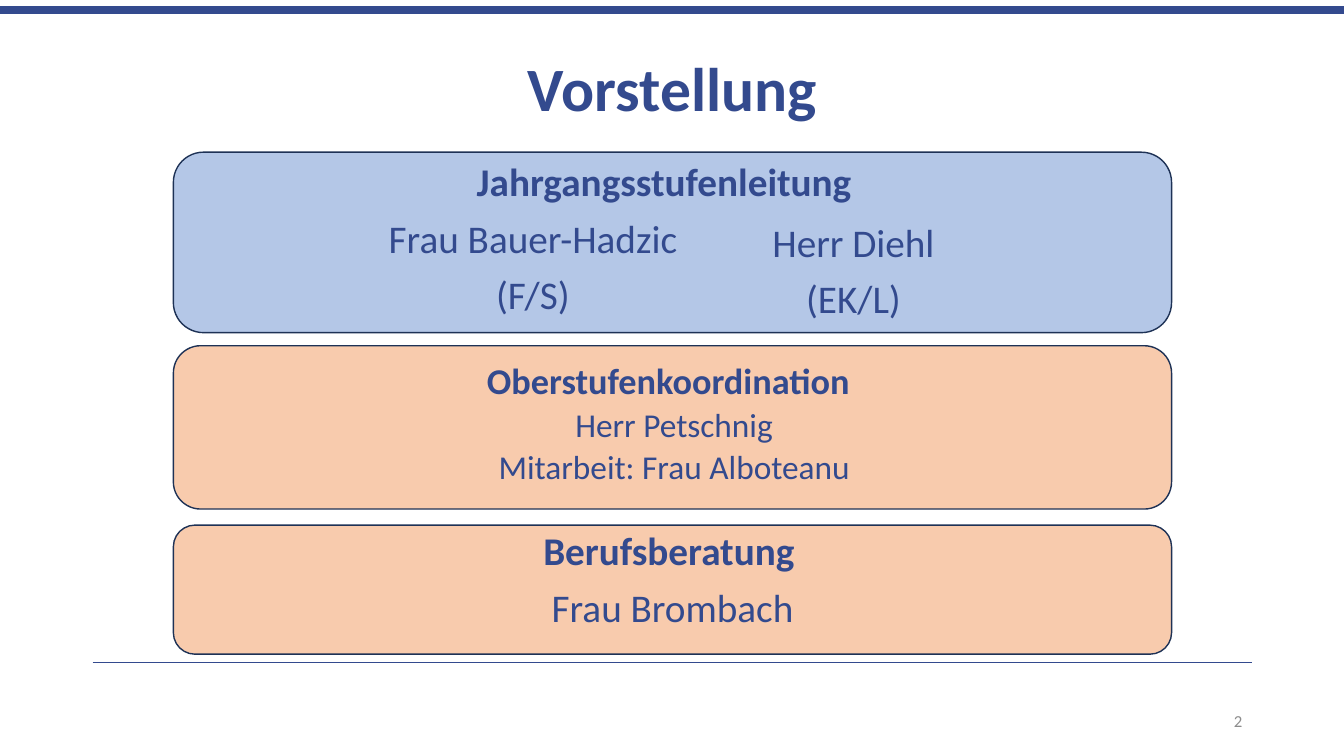
"""Build the slide that introduces the school's contact persons."""
from lxml import etree
from pptx import Presentation
from pptx.dml.color import RGBColor
from pptx.enum.shapes import MSO_CONNECTOR, MSO_SHAPE
from pptx.enum.text import MSO_ANCHOR, PP_ALIGN
from pptx.oxml.ns import qn
from pptx.util import Inches, Pt

LEFT, CENTER, RIGHT = PP_ALIGN.LEFT, PP_ALIGN.CENTER, PP_ALIGN.RIGHT
TOP, MIDDLE = MSO_ANCHOR.TOP, MSO_ANCHOR.MIDDLE
STRAIGHT = MSO_CONNECTOR.STRAIGHT
ROUNDED = MSO_SHAPE.ROUNDED_RECTANGLE

NAVY = RGBColor(0x33, 0x4A, 0x8E)
OUTLINE = RGBColor(0x1E, 0x32, 0x56)
BLUE = RGBColor(0xB4, 0xC7, 0xE7)
PEACH = RGBColor(0xF8, 0xCB, 0xAD)
GRAY = RGBColor(0x8C, 0x8C, 0x8C)

FONT = "Calibri"
SLIDE_WIDTH, SLIDE_HEIGHT = 13.33, 7.5
PANEL_LEFT, PANEL_WIDTH = 1.72, 9.9


def write_lines(shape, lines, size, color=NAVY, bold=False, align=CENTER,
                spacing=0.9, anchor=TOP):
    """Fill a shape with one equally formatted paragraph per line."""
    frame = shape.text_frame
    frame.word_wrap = True
    frame.vertical_anchor = anchor
    frame.text = "\n".join(lines)
    for index, paragraph in enumerate(frame.paragraphs):
        paragraph.alignment = align
        paragraph.line_spacing = spacing
        paragraph.space_before = Pt(10 if index else 0)
        font = paragraph.font
        font.name, font.size, font.bold = FONT, Pt(size), bold
        font.color.rgb = color


def add_text(slide, box, lines, size, **style):
    """Add a text box with the given lines."""
    shape = slide.shapes.add_textbox(*map(Inches, box))
    write_lines(shape, lines, size, **style)


def add_rule(slide, left, right, top, weight):
    """Add a horizontal line without shadow."""
    line = slide.shapes.add_connector(
        STRAIGHT, Inches(left), Inches(top), Inches(right), Inches(top))
    line.line.color.rgb = NAVY
    line.line.width = Pt(weight)
    etree.SubElement(line._element.spPr, qn("a:effectLst"))


def add_panel(slide, top, height, fill, heading, people):
    """Add a rounded panel with its heading and people, placed from its corner."""
    panel = slide.shapes.add_shape(
        ROUNDED, *map(Inches, (PANEL_LEFT, top, PANEL_WIDTH, height)))
    panel.shadow.inherit = False
    panel.fill.solid()
    panel.fill.fore_color.rgb = fill
    panel.line.color.rgb = OUTLINE
    panel.line.width = Pt(1)
    text, size, (left, down, width) = heading
    add_text(slide, (PANEL_LEFT + left, top + down, width, 0.6), [text], size,
             bold=True, align=LEFT)
    for lines, size, spacing, (left, down, width, height) in people:
        add_text(slide, (PANEL_LEFT + left, top + down, width, height), lines,
                 size, spacing=spacing)


def add_title(slide, box, text):
    """Move and format the title placeholder."""
    title = slide.shapes.title
    title.left, title.top, title.width, title.height = map(Inches, box)
    write_lines(title, [text], 44, bold=True, anchor=MIDDLE)


def add_frame(slide):
    """Add the top bar, the footer line and the page number."""
    add_rule(slide, 0, SLIDE_WIDTH, 0.1, 6)
    add_rule(slide, 0.92, 12.42, 6.57, 1)
    add_text(slide, (9.42, 6.95, 3, 0.4), ["2"], 12, color=GRAY, align=RIGHT,
             spacing=1.0, anchor=MIDDLE)


def main():
    """Build and save the presentation."""
    presentation = Presentation()
    presentation.slide_width = Inches(SLIDE_WIDTH)
    presentation.slide_height = Inches(SLIDE_HEIGHT)
    slide = presentation.slides.add_slide(presentation.slide_layouts[5])
    add_frame(slide)
    add_title(slide, (0.92, 0.4, 11.5, 1.01), "Vorstellung")
    add_panel(slide, 1.51, 1.79, BLUE,
              ("Jahrgangsstufenleitung", 28, (2.91, 0.05, 4.08)),
              [(["Frau Bauer-Hadzic", "(F/S)"], 28, 0.9, (1.96, 0.62, 3.21, 1.28)),
               (["Herr Diehl", "(EK/L)"], 28, 0.9, (5.29, 0.66, 2.91, 1.21))])
    add_panel(slide, 3.43, 1.62, PEACH,
              ("Oberstufenkoordination", 25.9, (3.01, 0.12, 4.08)),
              [(["Herr Petschnig", "Mitarbeit: Frau Alboteanu"], 23.8, 0.7,
                (2.11, 0.64, 5.71, 0.86))])
    add_panel(slide, 5.21, 1.28, PEACH,
              ("Berufsberatung", 28, (3.57, 0.02, 2.76)),
              [(["Frau Brombach"], 28, 0.9, (3.49, 0.58, 2.92, 0.6))])
    presentation.save("out.pptx")


if __name__ == "__main__":
    main()
